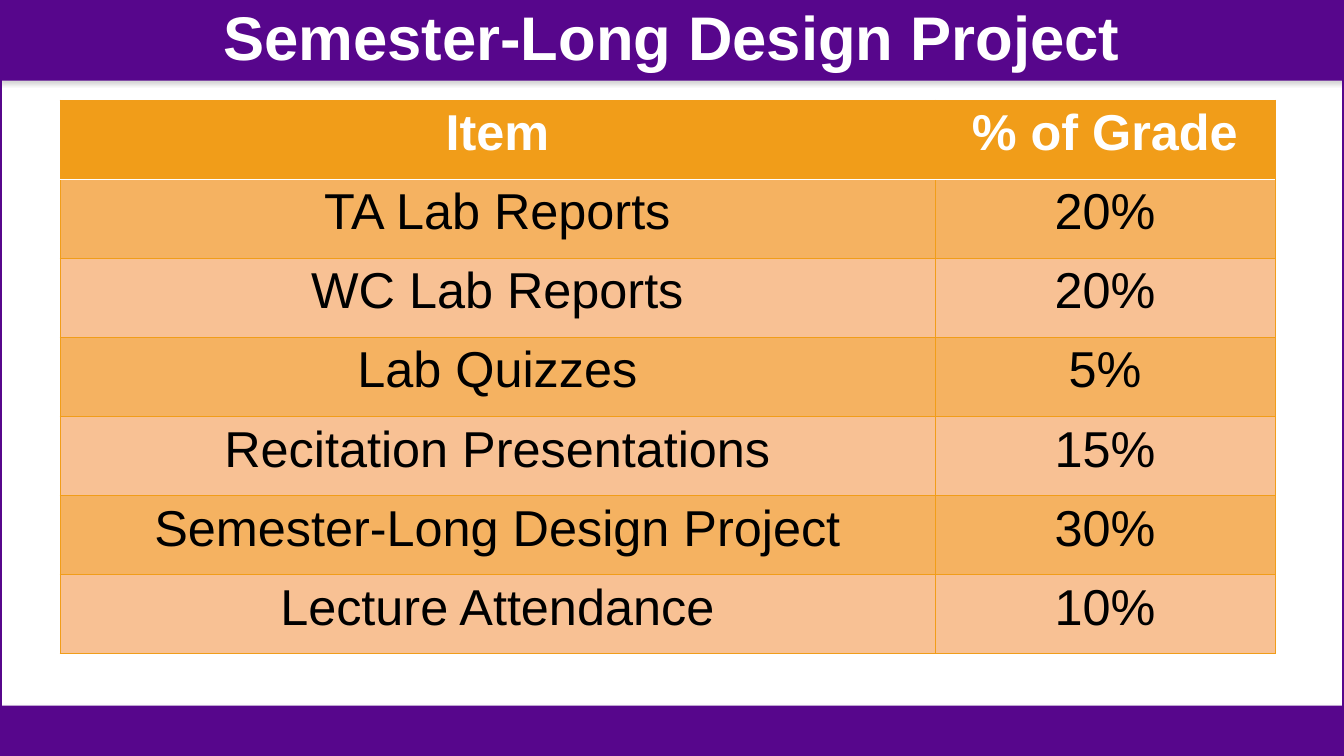
import pptx
import pptx.dml.color
import pptx.enum.shapes
import pptx.enum.text
import pptx.oxml
import pptx.oxml.ns
import pptx.util
from dataclasses import dataclass

Pt = pptx.util.Pt
ALIGN = pptx.enum.text.PP_ALIGN
ANCHOR = pptx.enum.text.MSO_ANCHOR


@dataclass(frozen=True)
class Theme:
    purple: str = "57068C"
    orange: str = "F19D19"
    dark_band: str = "F5B261"
    light_band: str = "F8C194"
    white: str = "FFFFFF"
    black: str = "000000"
    shadow: str = "808080"
    font: str = "Arial"
    title_size: float = 44
    table_size: float = 36


THEME = Theme()
SLIDE_WIDTH, SLIDE_HEIGHT = 960, 540
HEADER_HEIGHT, FOOTER_HEIGHT = 57.6, 36
TITLE = "Semester-Long Design Project"
GRADES = [
    ("Item", "% of Grade"),
    ("TA Lab Reports", "20%"),
    ("WC Lab Reports", "20%"),
    ("Lab Quizzes", "5%"),
    ("Recitation Presentations", "15%"),
    ("Semester-Long Design Project", "30%"),
    ("Lecture Attendance", "10%"),
]


def rgb(color):
    return pptx.dml.color.RGBColor.from_string(color)


def set_all(target, values):
    for name, value in values.items():
        setattr(target, name, value)


def write_text(text_frame, text, size, color, bold):
    paragraph = text_frame.paragraphs[0]
    paragraph.alignment = ALIGN.CENTER
    run = paragraph.add_run()
    run.text = text
    set_all(run.font, {"name": THEME.font, "size": Pt(size), "bold": bold})
    run.font.color.rgb = rgb(color)
    return paragraph


def add_rectangle(slide, box):
    rectangle = slide.shapes.add_shape(
        pptx.enum.shapes.MSO_SHAPE.RECTANGLE, *map(Pt, box))
    rectangle.shadow.inherit = False
    return rectangle


def add_bar(slide, box):
    bar = add_rectangle(slide, box)
    bar.fill.solid()
    bar.fill.fore_color.rgb = rgb(THEME.purple)
    bar.line.fill.background()
    # Soft shadow straight below the bar
    effects = bar.element.spPr.find(pptx.oxml.ns.qn("a:effectLst"))
    effects.append(pptx.oxml.parse_xml(
        f'<a:outerShdw {pptx.oxml.ns.nsdecls("a")} blurRad="{Pt(3.1)}" '
        f'dist="{Pt(1.8)}" dir="5400000" rotWithShape="0">'
        f'<a:srgbClr val="{THEME.shadow}"><a:alpha val="35000"/></a:srgbClr>'
        '</a:outerShdw>'))
    return bar


def add_frame(slide, box):
    frame = add_rectangle(slide, box)
    frame.fill.background()
    frame.line.color.rgb = rgb(THEME.purple)
    frame.line.width = Pt(2.25)
    return frame


def fill_title(slide, box):
    title = slide.shapes.title
    set_all(title, dict(zip(("left", "top", "width", "height"), map(Pt, box))))
    set_all(title.text_frame, {
        "word_wrap": True,
        "vertical_anchor": ANCHOR.MIDDLE,
        "auto_size": pptx.enum.text.MSO_AUTO_SIZE.NONE,
    })
    paragraph = write_text(
        title.text_frame, TITLE, THEME.title_size, THEME.white, True)
    paragraph.line_spacing = 0.9
    return title


def set_borders(cell, borders):
    properties = cell._tc.get_or_add_tcPr()
    for side, (color, width) in borders.items():
        properties.append(pptx.oxml.parse_xml(
            f'<a:ln{side} {pptx.oxml.ns.nsdecls("a")} w="{Pt(width)}">'
            f'<a:solidFill><a:srgbClr val="{color}"/></a:solidFill></a:ln{side}>'))


def add_grade_table(slide, box, item_share):
    left, top, width, height = box
    table = slide.shapes.add_table(
        len(GRADES), len(GRADES[0]), *map(Pt, box)).table
    set_all(table, {"first_row": False, "horz_banding": False})
    item_width = width * item_share
    for column, column_width in zip(table.columns, (item_width, width - item_width)):
        column.width = Pt(column_width)
    for row in table.rows:
        row.height = Pt(height / len(GRADES))

    thin, header_rule = (THEME.orange, 0.5), (THEME.white, 1)
    for row_index, texts in enumerate(GRADES):
        header = row_index == 0
        band = THEME.dark_band if row_index % 2 else THEME.light_band
        for column_index, text in enumerate(texts):
            cell = table.cell(row_index, column_index)
            set_borders(cell, {
                "L": thin,
                "R": thin,
                "T": header_rule if row_index == 1 else thin,
                "B": header_rule if header else thin,
            })
            cell.fill.solid()
            cell.fill.fore_color.rgb = rgb(THEME.orange if header else band)
            write_text(cell.text_frame, text, THEME.table_size,
                       THEME.white if header else THEME.black, header)


def build_grade_slide(presentation):
    slide = presentation.slides.add_slide(presentation.slide_layouts[5])
    header_box = (0, 0, SLIDE_WIDTH, HEADER_HEIGHT)

    # Purple bars and frame, kept behind the title
    title = fill_title(slide, header_box)
    backdrop = [
        add_bar(slide, header_box),
        add_frame(slide, (0, 0, SLIDE_WIDTH, SLIDE_HEIGHT)),
        add_bar(slide, (0, SLIDE_HEIGHT - FOOTER_HEIGHT, SLIDE_WIDTH, FOOTER_HEIGHT)),
    ]
    for shape in backdrop:
        title.element.addprevious(shape.element)

    # Grade breakdown
    add_grade_table(slide, (42.8, 71.5, 868, 395.3), 0.72)


def main():
    presentation = pptx.Presentation()
    set_all(presentation, {
        "slide_width": Pt(SLIDE_WIDTH), "slide_height": Pt(SLIDE_HEIGHT)})
    build_grade_slide(presentation)
    presentation.save("out.pptx")


if __name__ == "__main__":
    main()
